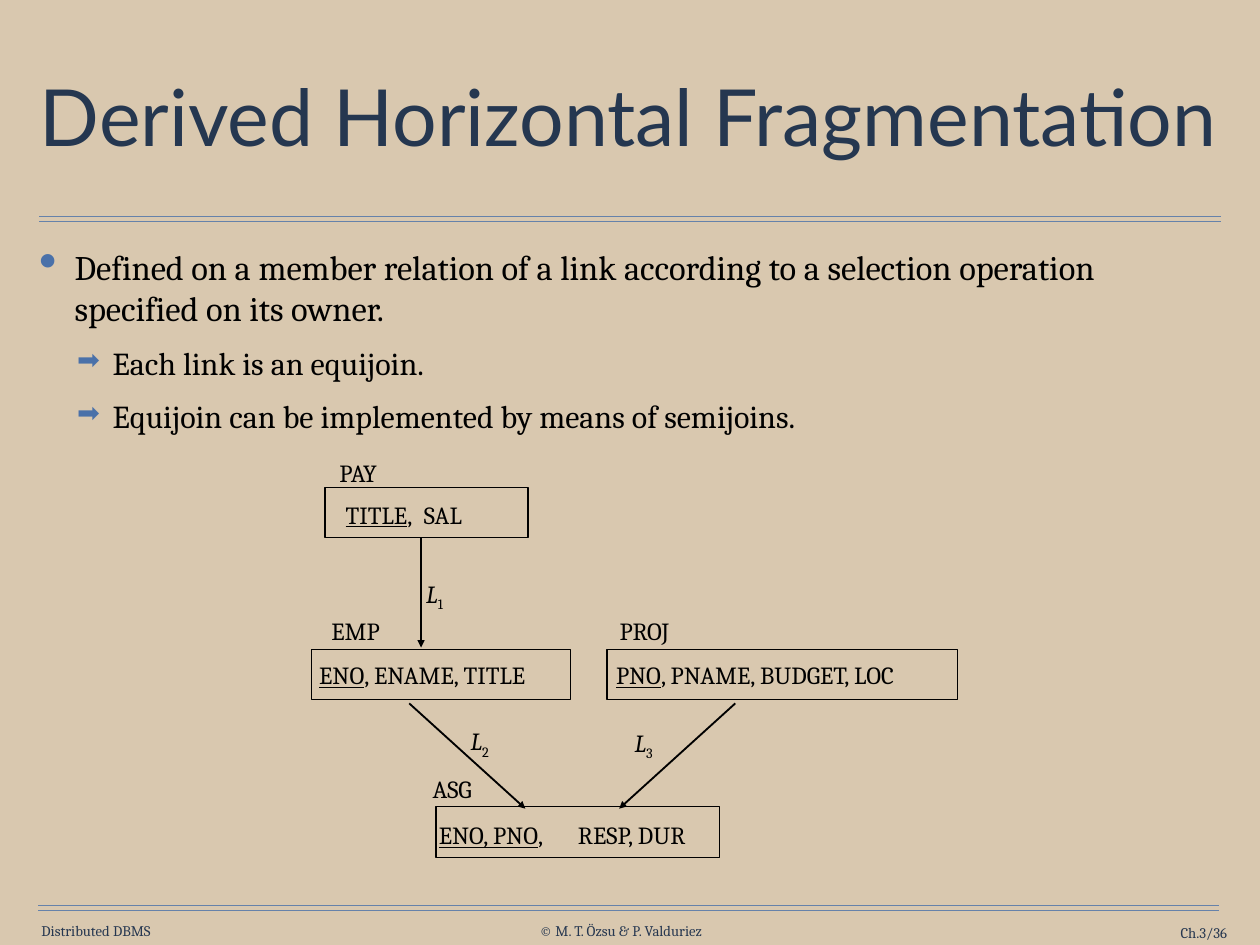
from lxml import etree
from pptx import Presentation, util as u
from pptx.dml.color import RGBColor
from pptx.enum import shapes, text
from pptx.oxml import ns

COLORS = {"sand": "D9C8AF", "navy": "253750", "footer": "263750",
          "rule": "6682AA", "bullet": "4A71A9", "ink": "000000"}
TITLE = {"name": "Lato", "size": u.Pt(64)}
FOOTER = {"name": "Cambria", "size": u.Pt(12)}
DIAGRAM = {"name": "Cambria", "size": u.Pt(20)}
KEY = {"underline": True}
LINK = {"italic": True}
LABEL_INSETS = (0.36, 0.18)
LABEL_HEIGHT = 1.22
RELATION_HEIGHT = 1.45

# left, top, width
RELATIONS = [(9.32, 13.97, 5.82), (8.92, 18.62, 7.44),
             (17.4, 18.62, 10.06), (12.5, 23.14, 8.13)]
# left, top, width, key attributes, remaining text
LABELS = [
    (9.37, 12.95, 2.18, "", "PAY"),
    (9.55, 14.15, 2.9, "TITLE", ","),
    (11.79, 14.15, 2.08, "", "SAL"),
    (9.14, 17.48, 2.26, "", "EMP"),
    (8.79, 18.75, 7.7, "ENO", ", ENAME, TITLE"),
    (17.4, 17.48, 2.44, "", "PROJ"),
    (17.3, 18.75, 10.46, "PNO", ", PNAME, BUDGET, LOC"),
    (12.04, 22, 2.18, "", "ASG"),
    (12.22, 23.34, 4.42, "ENO, PNO", ","),
    (16.21, 23.34, 4.29, "", "RESP, DUR"),
]
# label left and top, arrow start, arrow end
LINKS = [
    (11.86, 16.43, (12.07, 15.42), (12.07, 18.57)),
    (13.13, 20.65, (11.73, 20.17), (15.06, 23.19)),
    (17.83, 20.7, (21.08, 20.17), (17.75, 23.19)),
]
# text, point size, bullet, bullet size in percent, indent in cm
POINTS = [
    ("Defined on a member relation of a link according to a selection "
     "operation specified on its owner.", 28, "•", 150, 1.02),
    ("Each link is an equijoin.", 26, "➡", 85, 2.11),
    ("Equijoin can be implemented by means of semijoins.", 26, "➡", 85, 2.11),
]


def rgb(color):
    return RGBColor.from_string(COLORS[color])


def set_all(target, values):
    for name, value in values.items():
        setattr(target, name, value)


def add_span(para, words, style, color="ink"):
    span = para.add_run()
    span.text = words
    set_all(span.font, style)
    span.font.color.rgb = rgb(color)
    return span


def add_box(page, area, insets=(0, 0), anchor=text.MSO_ANCHOR.TOP):
    """Add an empty text box and return its text frame."""
    frame = page.shapes.add_textbox(*map(u.Cm, area)).text_frame
    side, edge = map(u.Cm, insets)
    set_all(frame, {"word_wrap": True, "vertical_anchor": anchor,
                    "margin_left": side, "margin_right": side,
                    "margin_top": edge, "margin_bottom": edge})
    return frame


def add_line(page, start, end, color, width, arrow=False):
    line = page.shapes.add_connector(
        shapes.MSO_CONNECTOR.STRAIGHT, *map(u.Cm, (*start, *end)))
    line.line.color.rgb = rgb(color)
    line.line.width = u.Pt(width)
    if arrow:
        etree.SubElement(line.line._get_or_add_ln(), ns.qn("a:tailEnd"),
                         type="triangle")
    etree.SubElement(line._element.spPr, ns.qn("a:effectLst"))


def add_double_rule(page, left, right, top):
    for y in (top, top + 0.15):
        add_line(page, (left, y), (right, y), "rule", 1)


def add_footer(page, left, top, width, words, align):
    frame = add_box(page, (left, top, width, 0.51),
                    anchor=text.MSO_ANCHOR.MIDDLE)
    para = frame.paragraphs[0]
    para.alignment = align
    add_span(para, words, FOOTER, "footer")


def add_title(page, words):
    frame = add_box(page, (0.99, 1.24, 34.14, 4.47), (0.15, 0.15),
                    text.MSO_ANCHOR.MIDDLE)
    para = frame.paragraphs[0]
    para.line_spacing = 0.9
    add_span(para, words, TITLE, "navy")


def add_bullet(para, mark, percent, indent):
    props = para._p.get_or_add_pPr()
    props.set("marL", str(u.Cm(indent)))
    props.set("indent", str(-u.Cm(1.02)))
    color = etree.SubElement(props, ns.qn("a:buClr"))
    etree.SubElement(color, ns.qn("a:srgbClr"), val=COLORS["bullet"])
    etree.SubElement(props, ns.qn("a:buSzPct"), val=str(percent * 1000))
    etree.SubElement(props, ns.qn("a:buChar"), char=mark)


def add_points(page):
    frame = add_box(page, (0.97, 6.91, 34.14, 5.84), (0.15, 0.15))
    for number, (words, size, mark, percent, indent) in enumerate(POINTS):
        para = frame.add_paragraph() if number else frame.paragraphs[0]
        add_bullet(para, mark, percent, indent)
        if number:
            para.level = 1
            para.space_before = u.Pt(12)
        add_span(para, words, {"name": "Cambria", "size": u.Pt(size)})


def add_relation(page, left, top, width):
    box = page.shapes.add_shape(
        shapes.MSO_SHAPE.RECTANGLE,
        *map(u.Cm, (left, top, width, RELATION_HEIGHT)))
    box.shadow.inherit = False
    box.fill.background()
    box.line.color.rgb = rgb("ink")
    box.line.width = u.Pt(1)


def add_label(page, left, top, width, key, rest):
    """Add a diagram label whose key attributes are underlined."""
    frame = add_box(page, (left, top, width, LABEL_HEIGHT), LABEL_INSETS)
    para = frame.paragraphs[0]
    if key:
        add_span(para, key, DIAGRAM | KEY)
    add_span(para, rest, DIAGRAM)


def add_link(page, number, left, top, start, end):
    frame = add_box(page, (left, top, 1.42, LABEL_HEIGHT), LABEL_INSETS)
    para = frame.paragraphs[0]
    add_span(para, "L", DIAGRAM | LINK)
    index = add_span(para, str(number), DIAGRAM)
    index.font._element.set("baseline", "-25000")
    add_line(page, start, end, "ink", 1.5, arrow=True)


def main():
    deck = Presentation()
    set_all(deck, {"slide_width": u.Cm(36.12), "slide_height": u.Cm(27.1)})
    page = deck.slides.add_slide(deck.slide_layouts[6])
    page.background.fill.solid()
    page.background.fill.fore_color.rgb = rgb("sand")

    add_double_rule(page, 1.12, 35, 6.2)
    add_double_rule(page, 1.09, 34.95, 25.96)
    left, right = text.PP_ALIGN.LEFT, text.PP_ALIGN.RIGHT
    add_footer(page, 1.19, 26.44, 3.51, "Distributed DBMS", left)
    add_footer(page, 15.47, 26.44, 5.28, "© M. T. Özsu & P. Valduriez", left)
    add_footer(page, 31.27, 26.49, 3.91, "Ch.3/36", right)
    add_title(page, "Derived Horizontal Fragmentation")
    add_points(page)
    for relation in RELATIONS:
        add_relation(page, *relation)
    for label in LABELS:
        add_label(page, *label)
    for number, link in enumerate(LINKS, 1):
        add_link(page, number, *link)
    deck.save("out.pptx")


if __name__ == "__main__":
    main()
